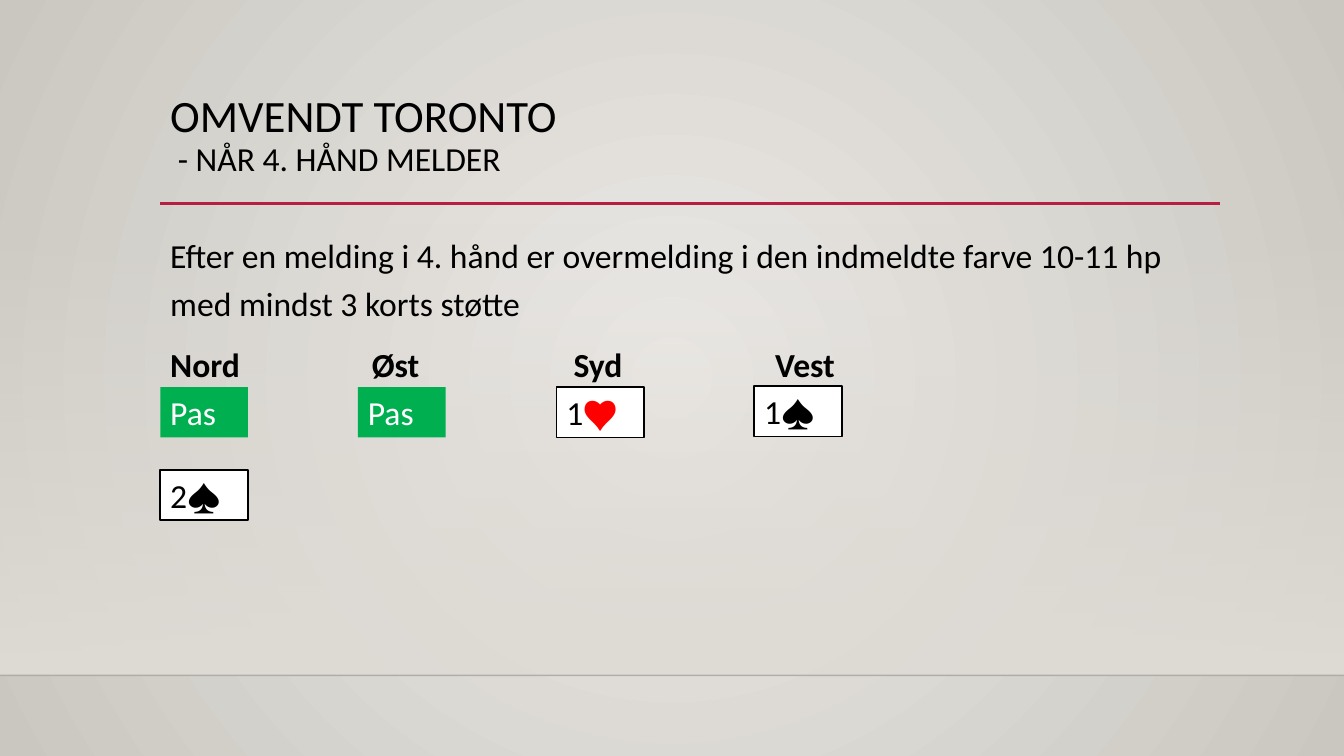
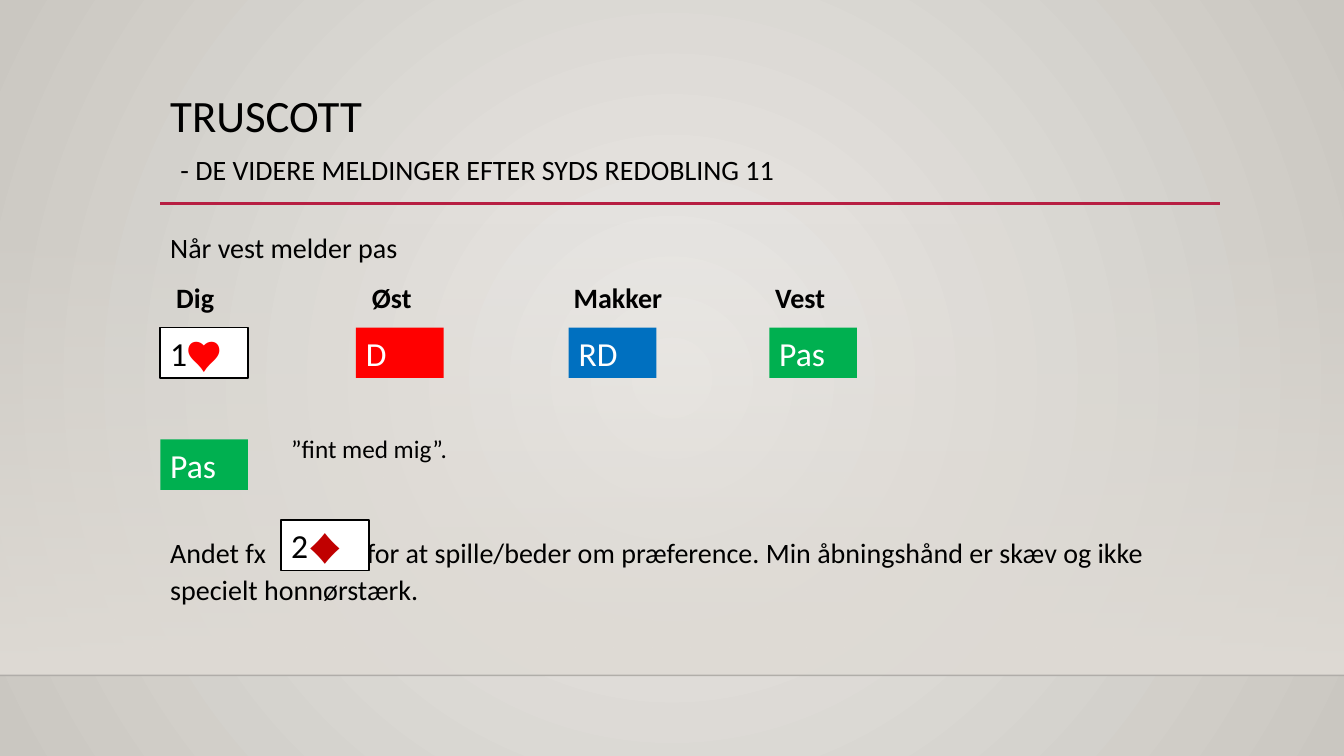
"""Build two bridge bidding slides: reverse Toronto and Truscott."""
from lxml import etree
from pptx import Presentation
from pptx.dml.color import RGBColor
from pptx.enum import shapes, text
from pptx.oxml import ns
from pptx.util import Inches, Pt

BLACK = RGBColor(0x00, 0x00, 0x00)
WHITE = RGBColor(0xFF, 0xFF, 0xFF)
RED = RGBColor(0xFF, 0x00, 0x00)
DARK_RED = RGBColor(0xC0, 0x00, 0x00)
GREEN = RGBColor(0x00, 0xB0, 0x50)
BLUE = RGBColor(0x00, 0x70, 0xC0)
ACCENT = RGBColor(0xB7, 0x1E, 0x42)
FLOOR = RGBColor(0xDF, 0xDB, 0xD5)
FLOOR_EDGE = RGBColor(0x00, 0x00, 0x01)
BG_CENTRE = RGBColor(0xEC, 0xEA, 0xE7)
BG_EDGE = RGBColor(0xCA, 0xC7, 0xC1)

FONT = "Calibri"
LEFT, WIDTH = 1.59, 10.5
CARD_W, CARD_H = 0.87, 0.5
CALLS = {"Pas": GREEN, "D": RED, "RD": BLUE}
SUITS = {"♥": RED, "♦": DARK_RED, "♠": BLACK}
SEAT_TABS = [0.06, 2, 4, 6]

SLIDES = [
    {
        "title": [("OMVENDT TORONTO", 32), ("\n", 32), (" - NÅR 4. HÅND MELDER", 24)],
        "size": 24,
        "spacing": 1.2,
        "before": 9,
        "intro": "Efter en melding i 4. hånd er overmelding i den indmeldte farve "
                 "10-11 hp med mindst 3 korts støtte",
        "seats": "Nord\tØst\tSyd\tVest",
        "bids": [(1.59, 3.84, "Pas"), (3.55, 3.84, "Pas"), (5.52, 3.84, "1♥︎"),
                 (7.48, 3.83, "1♠︎"), (1.59, 4.66, "2♠︎")],
        "notes": [],
    },
    {
        "title": [("TRUSCOTT", 32), ("\n", 32), (" ", 32),
                  ("- DE VIDERE MELDINGER EFTER SYDS REDOBLING 11", 20)],
        "size": 20,
        "spacing": 1.1,
        "before": 10,
        "intro": "Når vest melder pas",
        "seats": "\tDig\tØst\tMakker\tVest",
        "bids": [(3.53, 3.25, "D"), (5.64, 3.25, "RD"), (1.59, 3.25, "1♥︎"),
                 (7.63, 3.25, "Pas"), (1.59, 4.36, "Pas"), (2.79, 5.16, "2♦︎")],
        "notes": [
            (2.79, 4.25, 2.34, 0.4, "”fint med mig”.", 18, 1, []),
            (LEFT, 5.23, WIDTH, 1, "Andet fx\tfor at spille/beder om præference. "
             "Min åbningshånd er skæv og ikke specielt honnørstærk.", 20, 1.1, [1.95]),
        ],
    },
]


def add_run(p, words, size, color=BLACK, bold=False):
    """Add one formatted run."""
    r = p.add_run()
    r.text = words
    r.font.name, r.font.size, r.font.bold = FONT, Pt(size), bold
    r.font.color.rgb = color


def add_box(s, x, y, w, h, spacing, tabs=()):
    """Add a wrapping text box and return its frame."""
    tf = s.shapes.add_textbox(Inches(x), Inches(y), Inches(w), Inches(h)).text_frame
    tf.word_wrap = True
    p = tf.paragraphs[0]
    p.line_spacing = float(spacing)
    if tabs:
        tab_list = etree.SubElement(p._p.get_or_add_pPr(), ns.qn("a:tabLst"))
        for stop in tabs:
            etree.SubElement(tab_list, ns.qn("a:tab"), pos=str(Inches(stop)), algn="l")
    return tf


prs = Presentation()
prs.slide_width, prs.slide_height = Inches(13.33), Inches(7.5)

master = prs.slide_master
bg = master.background.fill
bg.gradient()
for stop, color in zip(bg.gradient_stops, (BG_CENTRE, BG_EDGE)):
    stop.color.rgb = color
grad = master.element.find(".//" + ns.qn("p:bgPr")).find(ns.qn("a:gradFill"))
grad.remove(grad.find(ns.qn("a:lin")))
circle = etree.SubElement(grad, ns.qn("a:path"), path="circle")
etree.SubElement(circle, ns.qn("a:fillToRect"), l="50000", t="50000", r="50000", b="50000")

for content in SLIDES:
    s = prs.slides.add_slide(prs.slide_layouts[6])

    floor = s.shapes.add_shape(shapes.MSO_SHAPE.RECTANGLE, 0, Inches(2.21),
                               prs.slide_width, Inches(4.49))
    floor.shadow.inherit = False
    floor.line.fill.background()
    floor.fill.gradient()
    floor.fill.gradient_angle = 270
    for stop in floor.fill.gradient_stops:
        stop.color.rgb = FLOOR
    clear = floor._element.spPr.find(".//" + ns.qn("a:srgbClr"))
    etree.SubElement(clear, ns.qn("a:alpha"), val="0")

    for x1, x2, y, color, width in ((0, 13.33, 6.7, FLOOR_EDGE, 1),
                                    (LEFT, 12.1, 2.02, ACCENT, 2.5)):
        rule = s.shapes.add_connector(shapes.MSO_CONNECTOR.STRAIGHT,
                                      Inches(x1), Inches(y), Inches(x2), Inches(y))
        rule.line.color.rgb, rule.line.width = color, Pt(width)
        sp_pr = rule._element.spPr
        etree.SubElement(sp_pr, ns.qn("a:effectLst"))
        if color == FLOOR_EDGE:
            etree.SubElement(sp_pr.find(".//" + ns.qn("a:srgbClr")),
                             ns.qn("a:alpha"), val="20000")

    p = add_box(s, LEFT, 0.88, WIDTH, 1.15, 0.9).paragraphs[0]
    for words, size in content["title"]:
        if words == "\n":
            p.add_line_break()
        else:
            add_run(p, words, size)

    tf = add_box(s, LEFT, 2.2, WIDTH, 1.9, content["spacing"])
    add_run(tf.paragraphs[0], content["intro"], content["size"])
    p = tf.add_paragraph()
    p.line_spacing, p.space_before = content["spacing"], Pt(content["before"])
    tab_list = etree.SubElement(p._p.get_or_add_pPr(), ns.qn("a:tabLst"))
    for stop in SEAT_TABS:
        etree.SubElement(tab_list, ns.qn("a:tab"), pos=str(Inches(stop)), algn="l")
    add_run(p, content["seats"], content["size"], bold=True)

    for x, y, w, h, words, size, spacing, tabs in content["notes"]:
        p = add_box(s, x, y, w, h, spacing, tabs).paragraphs[0]
        add_run(p, words, size)

    for x, y, bid in content["bids"]:
        card = s.shapes.add_shape(shapes.MSO_SHAPE.RECTANGLE, Inches(x), Inches(y),
                                  Inches(CARD_W), Inches(CARD_H))
        card.shadow.inherit = False
        card.fill.solid()
        card.fill.fore_color.rgb = CALLS.get(bid, WHITE)
        p = card.text_frame.paragraphs[0]
        p.alignment = text.PP_ALIGN.LEFT
        if bid in CALLS:
            card.line.fill.background()
            add_run(p, bid, 24, WHITE)
        else:
            card.line.color.rgb, card.line.width = BLACK, Pt(1.25)
            add_run(p, bid[0], 24)
            add_run(p, bid[1:], 24, SUITS[bid[1]])

prs.save("out.pptx")
